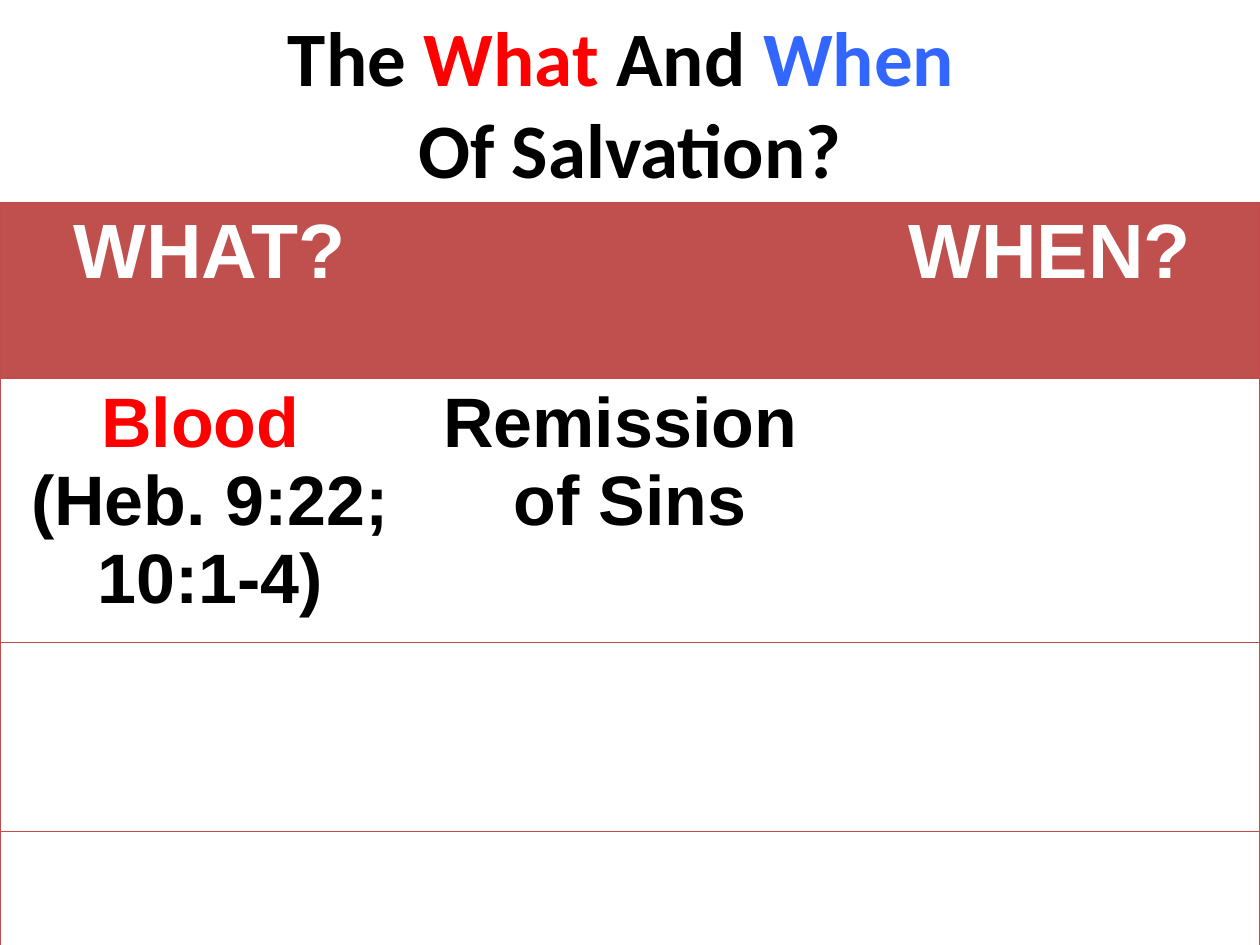
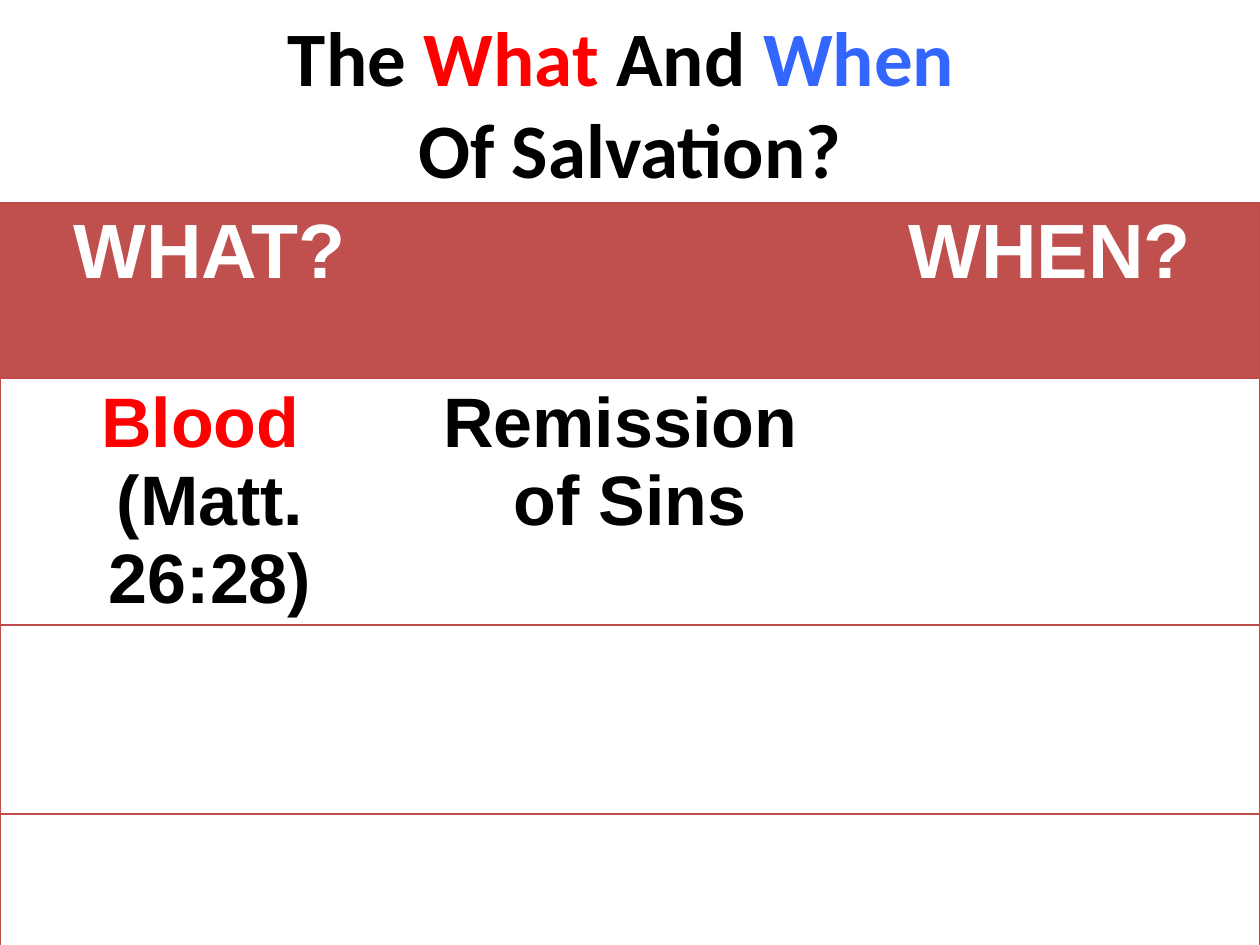
from lxml.etree import SubElement
from pptx import Presentation
from pptx.dml.color import RGBColor as Rgb
from pptx.enum.text import MSO_ANCHOR as Anchor, MSO_AUTO_SIZE as AutoSize, PP_ALIGN as Align
from pptx.oxml.ns import qn
from pptx.util import Pt

COLORS = {
    "ink": "000000",
    "what": "FF0000",
    "when": "3366FF",
    "paper": "FFFFFF",
    "header": "C0504D",
    "rule": "BF4C48",
}
TITLE_FONT = {"name": "Calibri", "size": Pt(44), "bold": True}
HEADER_FONT = {"name": "Arial", "size": Pt(44), "bold": True}
BODY_FONT = {"name": "Arial", "size": Pt(40), "bold": True}

SLIDE_WIDTH, SLIDE_HEIGHT = 720, 540
TITLE_BOX = {"left": Pt(54), "top": Pt(0), "width": Pt(612), "height": Pt(116)}
TABLE_TOP = 116
HEADER_HEIGHT, EMPTY_HEIGHT, LAST_HEIGHT = 100, 108, 100

TITLE_LINES = [
    [("The ", "ink"), ("What", "what"), (" And ", "ink"), ("When ", "when")],
    [("Of Salvation?", "ink")],
]
HEADINGS = ["WHAT?", "", "WHEN?"]
RESULT_LINES = [("Remission ", "ink"), ("of Sins", "ink")]
SCRIPTURES = [("(Heb. 9:22; 10:1-4)", 151), ("(Matt. 26:28)", 141)]


def set_values(target, values):
    """Set each attribute of the target from a dict of values."""
    for name, value in values.items():
        setattr(target, name, value)


def add_words(paragraph, words, color, font):
    """Append one formatted run to a paragraph."""
    run = paragraph.add_run()
    run.text = words
    set_values(run.font, font)
    run.font.color.rgb = Rgb.from_string(COLORS[color])


def add_title(slide):
    """Place the two-line coloured title."""
    title = slide.shapes.title
    set_values(title, TITLE_BOX)
    frame = title.text_frame
    set_values(frame, {"word_wrap": True, "auto_size": AutoSize.NONE,
                       "vertical_anchor": Anchor.MIDDLE})
    heading = frame.paragraphs[0]
    heading.alignment = Align.CENTER
    for number, line in enumerate(TITLE_LINES):
        if number:
            heading.add_line_break()
        for words, color in line:
            add_words(heading, words, color, TITLE_FONT)


def rule_cell(cell, ruled_sides):
    """Draw thin rules on the named sides of a cell and clear the others."""
    properties = cell._tc.get_or_add_tcPr()
    for side in "LRTB":
        rule = SubElement(properties, qn(f"a:ln{side}"), w=str(Pt(0.75)))
        if side in ruled_sides:
            paint = SubElement(rule, qn("a:solidFill"))
            SubElement(paint, qn("a:srgbClr"), val=COLORS["rule"])
        else:
            SubElement(rule, qn("a:noFill"))


def fill_cell(cell, lines, font):
    """Write centred lines, one paragraph each, into a cell."""
    frame = cell.text_frame
    for number, (words, color) in enumerate(lines):
        paragraph = frame.add_paragraph() if number else frame.paragraphs[0]
        paragraph.alignment = Align.CENTER
        add_words(paragraph, words, color, font)


def add_salvation_table(slide, scripture, blood_height):
    """Add the what-and-when table with one scripture filled in."""
    heights = [HEADER_HEIGHT, blood_height, EMPTY_HEIGHT, LAST_HEIGHT]
    columns = len(HEADINGS)
    table = slide.shapes.add_table(
        len(heights), columns, Pt(0), Pt(TABLE_TOP), Pt(SLIDE_WIDTH), Pt(sum(heights))
    ).table
    table.horz_banding = False
    blood_lines = [("Blood ", "what"), (scripture, "ink")]
    contents = {(0, column): [(heading, "paper")]
                for column, heading in enumerate(HEADINGS) if heading}
    contents.update({(1, 0): blood_lines, (1, 1): RESULT_LINES})
    for row, height in enumerate(heights):
        table.rows[row].height = Pt(height)
        for column in range(columns):
            cell = table.cell(row, column)
            outer_side = {0: "L", columns - 1: "R"}.get(column, "")
            rule_cell(cell, "TB" + outer_side)
            cell.fill.solid()
            cell.fill.fore_color.rgb = Rgb.from_string(COLORS["paper" if row else "header"])
            fill_cell(cell, contents.get((row, column), []),
                      BODY_FONT if row else HEADER_FONT)


def main():
    """Build one slide for each scripture and save the deck."""
    deck = Presentation()
    set_values(deck, {"slide_width": Pt(SLIDE_WIDTH), "slide_height": Pt(SLIDE_HEIGHT)})
    title_only = deck.slide_layouts[5]
    for scripture, blood_height in SCRIPTURES:
        slide = deck.slides.add_slide(title_only)
        add_title(slide)
        add_salvation_table(slide, scripture, blood_height)
    deck.save("out.pptx")


if __name__ == "__main__":
    main()
